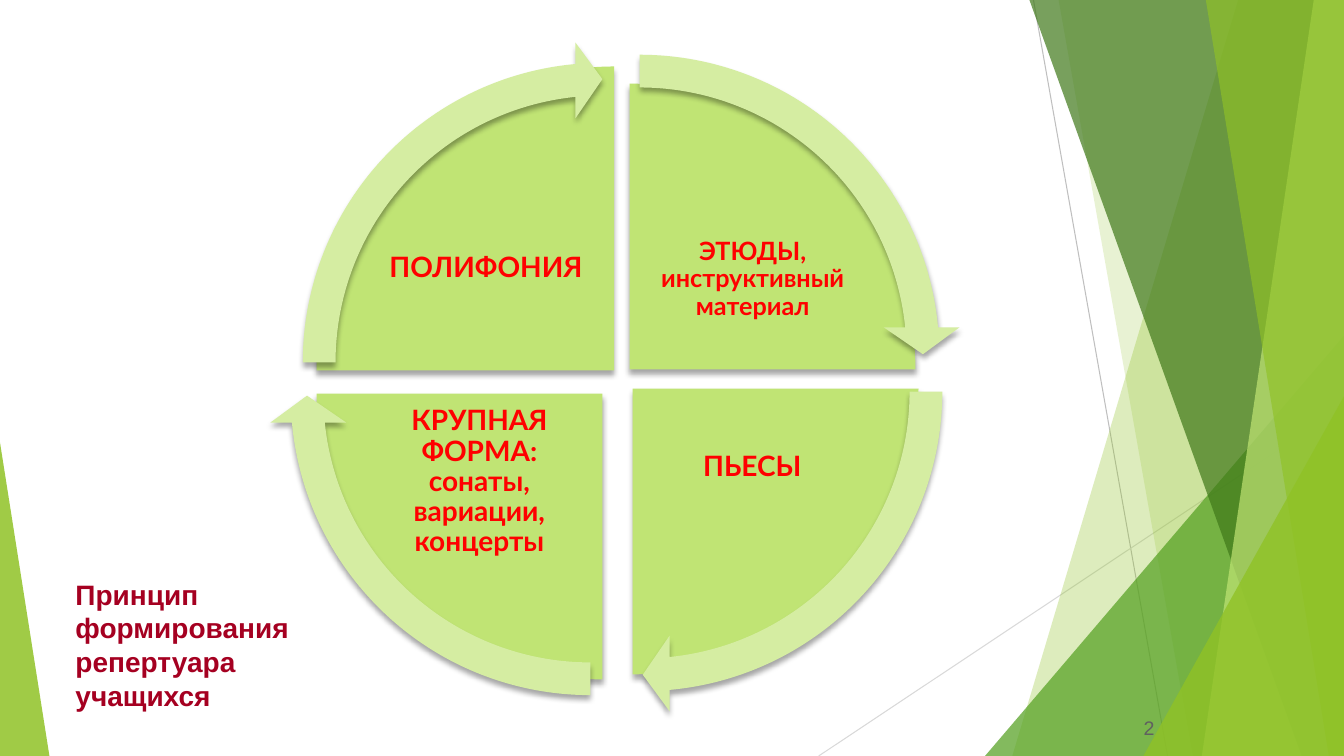
"""Build the slide on how a pupil's repertoire is put together."""
from lxml import etree
from pptx import Presentation
from pptx.dml.color import RGBColor
from pptx.enum.shapes import MSO_CONNECTOR, MSO_SHAPE
from pptx.enum.text import MSO_ANCHOR, PP_ALIGN
from pptx.oxml.ns import qn
from pptx.util import Inches, Pt

LINE = MSO_CONNECTOR.STRAIGHT
PIE, ARROW = MSO_SHAPE.PIE, MSO_SHAPE.CIRCULAR_ARROW
WEDGE = MSO_SHAPE.ISOSCELES_TRIANGLE
TOP, MIDDLE, BOTTOM = MSO_ANCHOR.TOP, MSO_ANCHOR.MIDDLE, MSO_ANCHOR.BOTTOM
LEFT, CENTER, RIGHT = PP_ALIGN.LEFT, PP_ALIGN.CENTER, PP_ALIGN.RIGHT
WIDE, HIGH = 13.33, 7.5

COLORS = {
    "gray": "BFBFBF", "pale": "D9D9D9", "green": "90C226", "grass": "54A021",
    "dark": "3F7819", "lime": "C0E474", "light": "D5EDA2",
    "red": "FF0000", "wine": "A50021", "number": "606060",
}


def paint(shape, color, alpha=100, shadow=False):
    """Fill a shape, with opacity and soft shadow if asked."""
    shape.shadow.inherit = False
    shape.line.fill.background()
    shape.fill.solid()
    shape.fill.fore_color.rgb = RGBColor.from_string(COLORS[color])
    if alpha < 100:
        tint = shape._element.spPr.find(qn("a:solidFill"))[0]
        etree.SubElement(tint, qn("a:alpha"), val=str(alpha * 1000))
    if shadow:
        effects = shape._element.spPr.find(qn("a:effectLst"))
        outer = etree.SubElement(effects, qn("a:outerShdw"), blurRad=str(Pt(4)),
                                 dist=str(Pt(3)), dir="5400000", rotWithShape="0")
        black = etree.SubElement(outer, qn("a:srgbClr"), val="000000")
        etree.SubElement(black, qn("a:alpha"), val="35000")


def write(box, text, size, color, font, align, anchor, bold=True):
    """Add a wrapped text box with one run and return its frame."""
    frame = slide.shapes.add_textbox(*map(Inches, box)).text_frame
    frame.word_wrap = True
    frame.vertical_anchor = anchor
    para = frame.paragraphs[0]
    para.alignment = align
    run = para.add_run()
    run.text = text
    run.font.size = Pt(size)
    run.font.name = font
    run.font.bold = bold
    run.font.color.rgb = RGBColor.from_string(COLORS[color])
    return frame


deck = Presentation()
deck.slide_width, deck.slide_height = Inches(WIDE), Inches(HIGH)
slide = deck.slides.add_slide(deck.slide_layouts[6])

rays = [((10.25, 0, 11.58, HIGH), "gray"), ((WIDE, 4.03, 8.12, HIGH), "pale")]
for ends, color in rays:
    ray = slide.shapes.add_connector(LINE, *map(Inches, ends))
    ray.line.color.rgb = RGBColor.from_string(COLORS[color])
    ray.line.width = Pt(0.75)
    etree.SubElement(ray._element.spPr, qn("a:effectLst"))

# Bands give top and bottom x; wedges give left, top, width and apex.
facets = [
    ((12.28, 10.04), "green", 30),
    ((10.5, 11.83), "green", 20),
    ((9.77, 3.33, 3.56, 1), "grass", 72),
    ((10.21, 12.91), "dark", 70),
    ((13.03, 11.92), "lime", 70),
    ((11.96, 13.18), "green", 65),
    ((11.34, 3.93, 1.99, 1), "green", 80),
    ((0, 4.39, 0.49, 0), "green", 85),
]
for place, color, alpha in facets:
    if len(place) == 2:
        upper, lower = place
        pen = slide.shapes.build_freeform(Inches(upper), 0)
        edge = [(WIDE, 0), (WIDE, HIGH), (lower, HIGH)]
        pen.add_line_segments([(Inches(x), Inches(y)) for x, y in edge])
        facet = pen.convert_to_shape()
    else:
        left, top, width, apex = place
        facet = slide.shapes.add_shape(WEDGE, Inches(left), Inches(top),
                                       Inches(width), Inches(HIGH - top))
        facet.adjustments[0] = apex
    paint(facet, color, alpha)

write((11.08, 7.07, 0.47, 0.3), "2", 14, "number", "Arial", RIGHT, MIDDLE, False)

parts = [
    ((3.41, 0.83, 5.67, 5.67), 162, (6.42, 2, 2.09, 1.55),
     "ЭТЮДЫ, инструктивный материал", 18, 0.9, 0.03),
    ((3.44, 1.02, 5.67, 5.67), 0, (6.45, 3.97, 2.09, 1.55),
     "ПЬЕСЫ ", 20, 1, 0.28),
    ((3.14, 1.07, 5.67, 5.67), 54, (3.71, 4.01, 2.09, 1.55),
     "КРУПНАЯ ФОРМА: сонаты, вариации, концерты", 20, 0.9, 0.03),
    ((3.14, 0.66, 5.9, 6.03), 108, (3.73, 1.9, 2.18, 1.65),
     "ПОЛИФОНИЯ", 20, 1, 0.2),
]
for area, start, box, text, size, pitch, foot in parts:
    pie = slide.shapes.add_shape(PIE, *map(Inches, area))
    pie.adjustments[0] = start
    pie.adjustments[1] = (start + 54) % 216
    paint(pie, "lime", shadow=True)
    frame = write(box, text, size, "red", "Lato", CENTER, MIDDLE)
    frame.margin_left = frame.margin_right = frame.margin_top = Inches(0.03)
    frame.margin_bottom = Inches(foot)
    frame.paragraphs[0].line_spacing = pitch

arrows = [(3.16, 0.33, 162), (3.19, 0.7, 0), (2.67, 0.74, 54), (2.79, 0.41, 108)]
for left, top, start in arrows:
    arrow = slide.shapes.add_shape(ARROW, Inches(left), Inches(top),
                                   Inches(6.37), Inches(6.37))
    for i, value in enumerate([0.051, 3.275, start + 50.725, start, 0.059]):
        arrow.adjustments[i] = value
    paint(arrow, "light", shadow=True)

write((0.65, 2.5, 2.77, 4.61), "Принцип формирования репертуара учащихся",
      20, "wine", "Arial", LEFT, BOTTOM)

deck.save("out.pptx")
